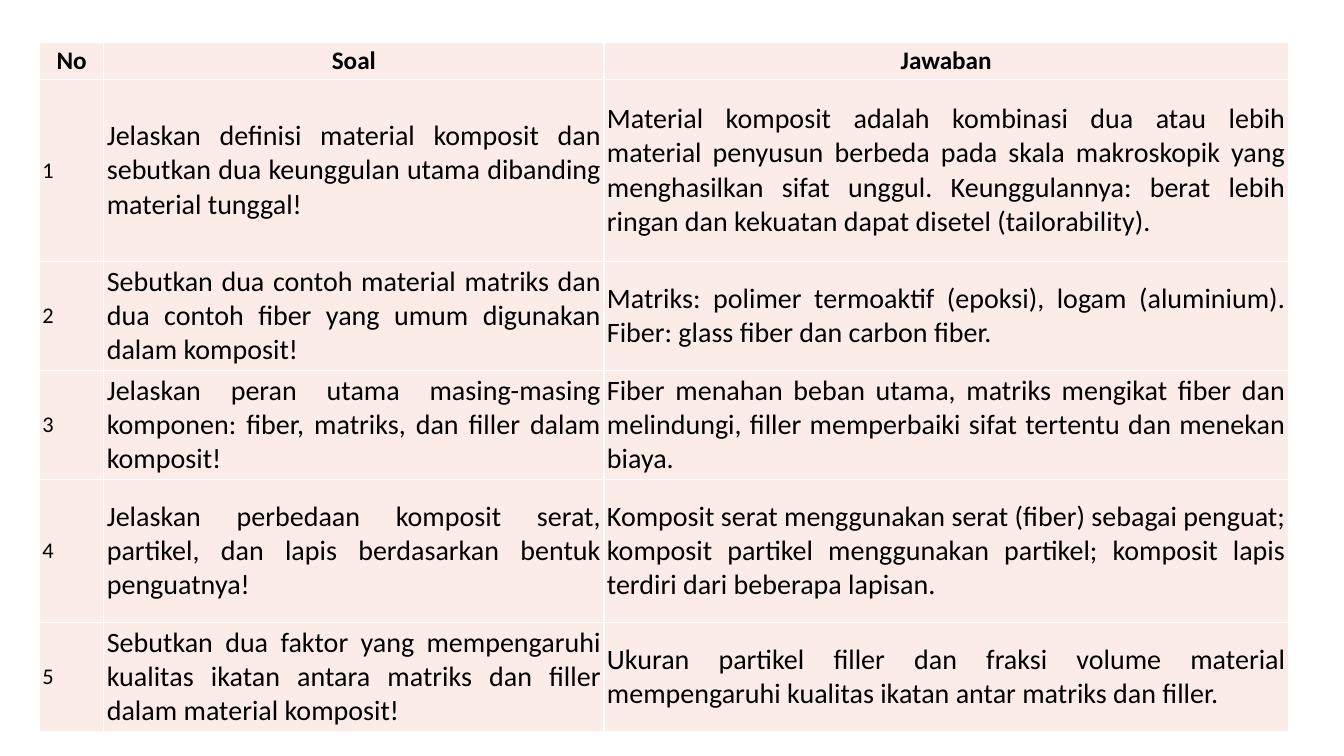
from lxml import etree
from pptx import Presentation
from pptx.dml.color import RGBColor
from pptx.enum.text import MSO_ANCHOR, PP_ALIGN
from pptx.oxml.ns import qn
from pptx.util import Inches, Pt

CENTER, LEFT, JUSTIFY = PP_ALIGN.CENTER, PP_ALIGN.LEFT, PP_ALIGN.JUSTIFY
MIDDLE = MSO_ANCHOR.MIDDLE
BLANK_LAYOUT = 6
FONT, INK, BLUSH, RULE = "Calibri", "000000", "FCECE8", "FFFFFF"
INSET = 0.03
TABLE_BOX = (0.39, 0.42, 12.39, 6.73)
COLUMN_WIDTHS = (0.64, 4.96, 6.79)
ROW_HEIGHTS = (0.21, 1.81, 1.04, 1.04, 1.42, 1.04)
HEADINGS = ("No", "Soal", "Jawaban")
QUESTIONS = (
    ("Jelaskan definisi material komposit dan sebutkan dua keunggulan utama "
     "dibanding material tunggal!",
     "Material komposit adalah kombinasi dua atau lebih material penyusun berbeda "
     "pada skala makroskopik yang menghasilkan sifat unggul. Keunggulannya: berat "
     "lebih ringan dan kekuatan dapat disetel (tailorability)."),
    ("Sebutkan dua contoh material matriks dan dua contoh fiber yang umum "
     "digunakan dalam komposit!",
     "Matriks: polimer termoaktif (epoksi), logam (aluminium). "
     "Fiber: glass fiber dan carbon fiber."),
    ("Jelaskan peran utama masing-masing komponen: fiber, matriks, dan filler "
     "dalam komposit!",
     "Fiber menahan beban utama, matriks mengikat fiber dan melindungi, filler "
     "memperbaiki sifat tertentu dan menekan biaya."),
    ("Jelaskan perbedaan komposit serat, partikel, dan lapis berdasarkan bentuk "
     "penguatnya!",
     "Komposit serat menggunakan serat (fiber) sebagai penguat; komposit partikel "
     "menggunakan partikel; komposit lapis terdiri dari beberapa lapisan."),
    ("Sebutkan dua faktor yang mempengaruhi kualitas ikatan antara matriks dan "
     "filler dalam material komposit!",
     "Ukuran partikel filler dan fraksi volume material mempengaruhi kualitas "
     "ikatan antar matriks dan filler."),
)


def color(value):
    """Turn a hex string into a colour."""
    return RGBColor.from_string(value)


def add_borders(cell):
    """Draw a thin rule on all four sides, ahead of the cell's fill."""
    properties = cell._tc.get_or_add_tcPr()
    for position, side in enumerate(("a:lnL", "a:lnR", "a:lnT", "a:lnB")):
        line = etree.Element(qn(side), w=str(Pt(1)))
        fill = etree.SubElement(line, qn("a:solidFill"))
        etree.SubElement(fill, qn("a:srgbClr"), val=RULE)
        properties.insert(position, line)


def write_cell(cell, text, size, alignment, bold=False):
    """Fill one cell and set its text."""
    cell.fill.solid()
    cell.fill.fore_color.rgb = color(BLUSH)
    cell.margin_left = cell.margin_right = Inches(INSET)
    cell.margin_top = cell.margin_bottom = Inches(INSET)
    cell.vertical_anchor = MIDDLE
    add_borders(cell)
    paragraph = cell.text_frame.paragraphs[0]
    paragraph.alignment = alignment
    run = paragraph.add_run()
    run.text = text
    run.font.name, run.font.size, run.font.bold = FONT, Pt(size), bold
    run.font.color.rgb = color(INK)


def add_question_table(slide, box):
    """Place the questions and answers in a table across the box."""
    left, top, width, height = box
    table = slide.shapes.add_table(
        len(QUESTIONS) + 1, len(HEADINGS),
        Inches(left), Inches(top), Inches(width), Inches(height)).table
    table.horz_banding = False
    for column, share in zip(table.columns, COLUMN_WIDTHS):
        column.width = Inches(width * share / sum(COLUMN_WIDTHS))
    for row, row_height in zip(table.rows, ROW_HEIGHTS):
        row.height = Inches(row_height)
    for column, heading in enumerate(HEADINGS):
        write_cell(table.cell(0, column), heading, 18, CENTER, bold=True)
    for number, (question, answer) in enumerate(QUESTIONS, start=1):
        write_cell(table.cell(number, 0), str(number), 16, LEFT)
        write_cell(table.cell(number, 1), question, 20, JUSTIFY)
        write_cell(table.cell(number, 2), answer, 20, JUSTIFY)


def main():
    """Build and save the slide."""
    deck = Presentation()
    deck.slide_width, deck.slide_height = Inches(13.33), Inches(7.5)
    slide = deck.slides.add_slide(deck.slide_layouts[BLANK_LAYOUT])
    add_question_table(slide, TABLE_BOX)
    deck.save("out.pptx")


if __name__ == "__main__":
    main()
